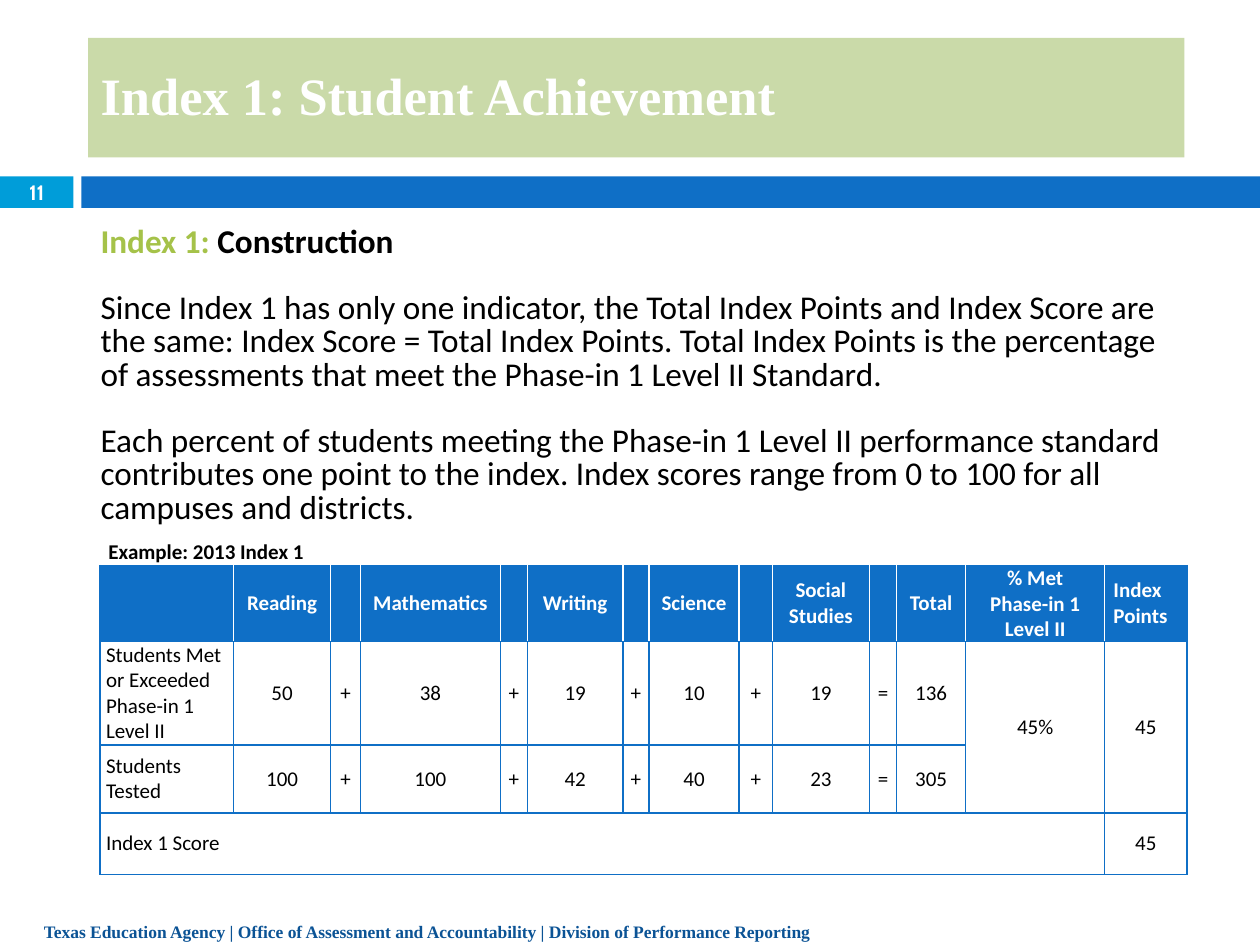
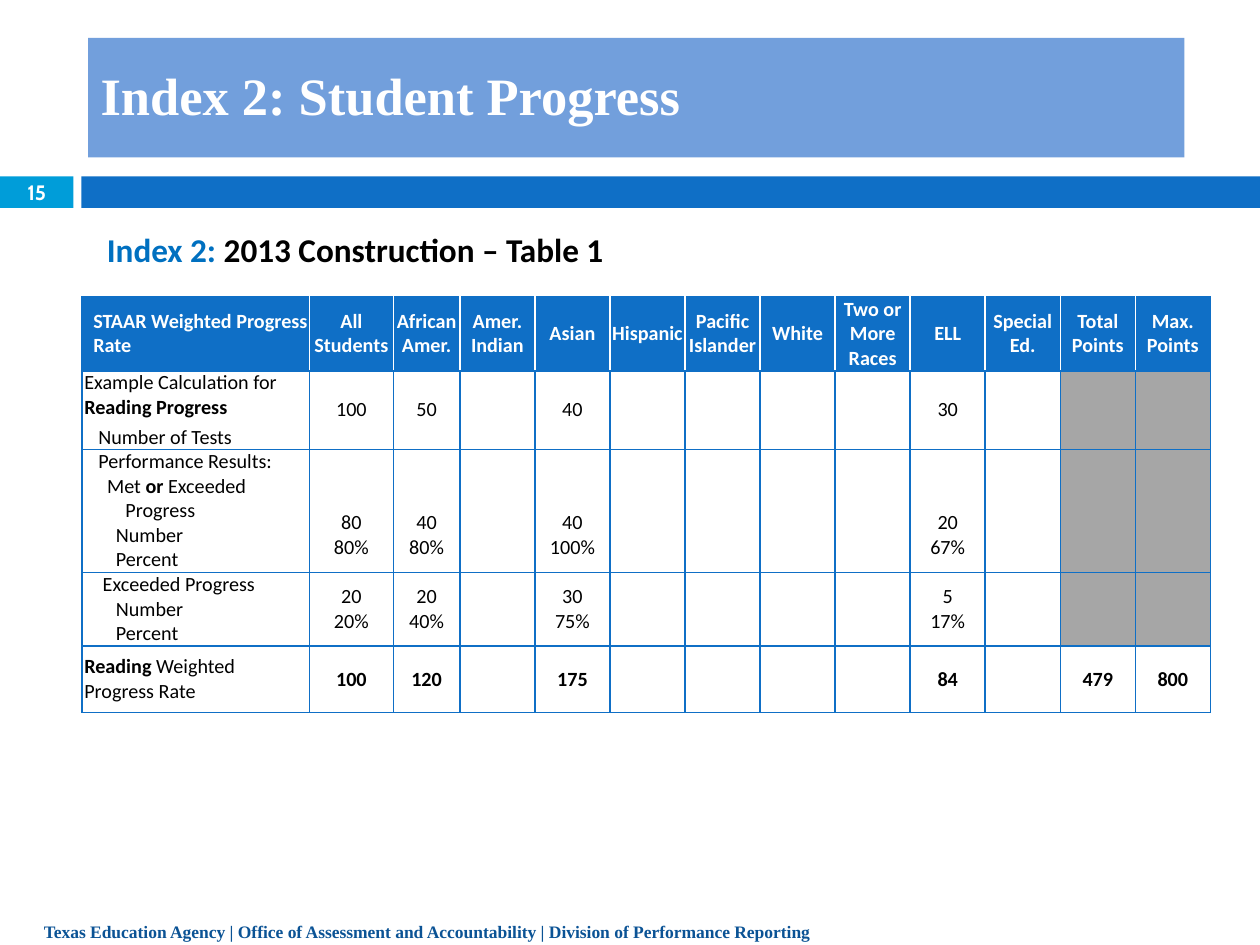
from lxml.etree import SubElement
from pptx import Presentation
from pptx.dml.color import RGBColor
from pptx.enum.shapes import MSO_SHAPE as Preset
from pptx.enum.text import MSO_ANCHOR as Anchor, PP_ALIGN as Align
from pptx.oxml.ns import qn
from pptx.util import Pt

COLORS = {
    "white": "FFFFFF",
    "black": "000000",
    "blue": "0F6FC6",
    "cyan": "009DD9",
    "footer": "0B5395",
    "green band": "CADAA9",
    "green text": "A5C249",
    "blue band": "729FDC",
    "blue text": "0070C0",
    "gray": "A6A6A6",
}
SERIF, SANS, NUMBER_FONT = "Times New Roman", "Calibri", "Cabin"
FOOTER = ("Texas Education Agency | Office of Assessment and Accountability"
          " | Division of Performance Reporting")


def rgb(name):
    return RGBColor.from_string(COLORS[name])


def set_font(font, name, size, color, bold=False):
    font.name, font.size, font.bold = name, Pt(size), bold
    font.color.rgb = rgb(color)


def add_band(slide, left, top, width, height, color):
    band = slide.shapes.add_shape(
        Preset.RECTANGLE, Pt(left), Pt(top), Pt(width), Pt(height))
    band.shadow.inherit = False
    band.fill.solid()
    band.fill.fore_color.rgb = rgb(color)
    band.line.fill.background()
    band.text_frame.vertical_anchor = Anchor.MIDDLE
    return band


def add_text_box(slide, left, top, width, height):
    frame = slide.shapes.add_textbox(
        Pt(left), Pt(top), Pt(width), Pt(height)).text_frame
    frame.word_wrap = True
    return frame


def write_line(paragraph, text, font, size, color, bold=True, spacing=None):
    paragraph.text = text
    paragraph.alignment = Align.LEFT
    set_font(paragraph.font, font, size, color, bold)
    if spacing:
        paragraph.line_spacing = Pt(spacing)


def write_heading(paragraph, index, topic, color, spacing):
    paragraph.line_spacing = Pt(spacing)
    for text, run_color in ((index, color), (topic, "black")):
        run = paragraph.add_run()
        run.text = text
        set_font(run.font, SANS, 19, run_color, True)


def add_base_slide(presentation, title, number, title_color):
    """Add a slide with its title band, number bar and footer."""
    slide = presentation.slides.add_slide(presentation.slide_layouts[6])
    number_band = add_band(slide, 0, 100.8, 42, 18, "cyan")
    add_band(slide, 46.5, 100.8, 673.5, 18, "blue")
    frame = number_band.text_frame
    frame.margin_top = frame.margin_bottom = 0
    write_line(frame.paragraphs[0], number, NUMBER_FONT, 11.9, "white")
    frame.paragraphs[0].alignment = Align.CENTER

    title_band = add_band(slide, 50.4, 21.6, 626.4, 68.4, title_color)
    write_line(title_band.text_frame.paragraphs[0], title,
               SERIF, 30, "white", spacing=32)
    footer = add_text_box(slide, 18, 509, 648, 29.5)
    write_line(footer.paragraphs[0], FOOTER, SERIF, 10, "footer", spacing=26)
    return slide


def add_grid(slide, left, top, widths, heights):
    table = slide.shapes.add_table(
        len(heights), len(widths), Pt(left), Pt(top),
        Pt(sum(widths)), Pt(sum(heights))).table
    table.horz_banding = False
    for column, width in zip(table.columns, widths):
        column.width = Pt(width)
    for row, height in zip(table.rows, heights):
        row.height = Pt(height)
    return table


def set_borders(cell, colors):
    """Draw 1 pt borders; colors maps L, R, T, B to a colour name."""
    properties = cell._tc.get_or_add_tcPr()
    for side in "LRTB":
        line = SubElement(properties, qn(f"a:ln{side}"), w="12700")
        if side in colors:
            fill = SubElement(line, qn("a:solidFill"))
            SubElement(fill, qn("a:srgbClr"), val=COLORS[colors[side]])
        else:
            SubElement(line, qn("a:noFill"))


def style_cell(cell, borders, fill=None, margin=0, anchor=Anchor.MIDDLE):
    set_borders(cell, borders)
    if fill:
        cell.fill.solid()
        cell.fill.fore_color.rgb = rgb(fill)
    else:
        cell.fill.background()
    cell.margin_left = cell.margin_right = Pt(margin)
    cell.margin_top = cell.margin_bottom = 0
    cell.vertical_anchor = anchor


def write_cell(cell, text, size, color="black", bold=False, align=Align.CENTER):
    cell.text = text
    for paragraph in cell.text_frame.paragraphs:
        paragraph.alignment = align
        set_font(paragraph.font, SANS, size, color, bold)


def write_label(cell, lines, size):
    """Write (indent, text) lines, where asterisks enclose bold words."""
    frame = cell.text_frame
    for position, (indent, text) in enumerate(lines):
        paragraph = frame.add_paragraph() if position else frame.paragraphs[0]
        set_font(paragraph.font, SANS, size, "black")
        paragraph._p.get_or_add_pPr().set("marL", str(Pt(indent)))
        for part, words in enumerate(text.split("*")):
            if words:
                run = paragraph.add_run()
                run.text = words
                run.font.bold = part % 2 == 1


BLUE_BORDERS = dict.fromkeys("LRTB", "blue")


def fill_header(table, row, names, size):
    last = len(names) - 1
    for column, name in enumerate(names):
        cell = table.cell(row, column)
        borders = dict(BLUE_BORDERS)
        if column > 0:
            borders["L"] = "white"
        if column < last:
            borders["R"] = "white"
        style_cell(cell, borders, "blue")
        write_cell(cell, name, size, "white", True)


def add_achievement_table(slide):
    widths = [76.5, 55.5, 17, 80, 15.5, 54.5, 15, 51.5, 19, 55.5, 15.5,
              39.5, 79.5, 47]
    table = add_grid(slide, 57, 304.5, widths, [18.7, 43.5, 59, 39, 35])
    last = len(widths) - 1
    for column in range(len(widths)):
        style_cell(table.cell(0, column), {"B": "blue"}, margin=5,
                   anchor=Anchor.BOTTOM)
    caption = table.cell(0, 0)
    caption.merge(table.cell(0, last))
    write_cell(caption, "Example: 2013 Index 1", 12, bold=True, align=Align.LEFT)
    caption.text_frame.paragraphs[0].line_spacing = Pt(13)

    fill_header(table, 1, [
        "", "Reading", "", "Mathematics", "", "Writing", "", "Science", "",
        "Social\nStudies", "", "Total", "% Met\nPhase-in 1\nLevel II",
        "Index Points"], 12)
    points_header = table.cell(1, last)
    points_header.margin_left = Pt(5)
    points_header.text_frame.paragraphs[0].alignment = Align.LEFT

    signs = ["+", "+", "+", "+", "="]
    records = [
        ("Students Met or Exceeded Phase-in 1 Level II",
         [50, 38, 19, 10, 19], 136, ["45%", "45"]),
        ("Students Tested", [100, 100, 42, 40, 23], 305, ["", ""]),
    ]
    rows = []
    for label, counts, total, results in records:
        terms = [str(term) for pair in zip(counts, signs) for term in pair]
        rows.append([label, *terms, str(total), *results])
    rows.append(["Index 1 Score", *[""] * (last - 1), "45"])
    for row, values in enumerate(rows, 2):
        for column, value in enumerate(values):
            cell = table.cell(row, column)
            is_label = column == 0
            style_cell(cell, BLUE_BORDERS, margin=3.6 if is_label else 0)
            write_cell(cell, value, 12,
                       align=Align.LEFT if is_label else Align.CENTER)
    for column in (last - 1, last):
        table.cell(2, column).merge(table.cell(3, column))
    table.cell(4, 0).merge(table.cell(4, last - 1))


def add_progress_table(slide):
    size = 11.5
    names = ["STAAR Weighted Progress Rate", "All\nStudents", "African Amer.",
             "Amer. Indian", "Asian", "Hispanic", "Pacific Islander", "White",
             "Two or More\nRaces", "ELL", "Special Ed.", "Total Points",
             "Max.\nPoints"]
    widths = [130, 48, 38] + [42.9] * 10
    table = add_grid(slide, 46.8, 169.7, widths, [42.2, 45, 70.2, 42.2, 38])
    fill_header(table, 0, names, size)
    corner = table.cell(0, 0)
    corner.margin_left = Pt(6.5)
    corner.text_frame.paragraphs[0].alignment = Align.LEFT

    labels = [
        [(0, "Example Calculation for *Reading Progress*"),
         (8, "Number of Tests")],
        [(8, "Performance Results:"), (13, "Met *or* Exceeded"),
         (23.5, "Progress"), (18, "Number"), (18, "Percent")],
        [(10.5, "Exceeded Progress"), (18, "Number"), (18, "Percent")],
        [(0, "*Reading* Weighted Progress Rate")],
    ]
    groups = {"all": 1, "african": 2, "asian": 4, "ell": 9,
              "total": 11, "maximum": 12}
    results = [
        {"all": "100", "african": "50", "asian": "40", "ell": "30"},
        {"all": "80\n80%", "african": "40\n80%", "asian": "40\n100%",
         "ell": "20\n67%"},
        {"all": "20\n20%", "african": "20\n40%", "asian": "30\n75%",
         "ell": "5\n17%"},
        {"all": "100", "african": "120", "asian": "175", "ell": "84",
         "total": "479", "maximum": "800"},
    ]
    rate_row = len(results)
    for row, (label, record) in enumerate(zip(labels, results), 1):
        values = {groups[group]: text for group, text in record.items()}
        label_cell = table.cell(row, 0)
        style_cell(label_cell, BLUE_BORDERS, margin=1.4)
        write_label(label_cell, label, size)
        for column in range(1, len(names)):
            cell = table.cell(row, column)
            unused = column >= groups["total"] and row < rate_row
            style_cell(cell, BLUE_BORDERS, "gray" if unused else None)
            write_cell(cell, values.get(column, ""), size, bold=row == rate_row)
            if row == 2 and column in values:
                cell.margin_top = Pt(28)
    table.cell(1, 0).text_frame.paragraphs[1].space_before = Pt(3)


def add_achievement_slide(presentation):
    slide = add_base_slide(
        presentation, "Index 1: Student Achievement", "11", "green band")
    add_achievement_table(slide)
    body = add_text_box(slide, 50.4, 126, 626.4, 175)
    write_heading(body.paragraphs[0], "Index 1: ", "Construction",
                  "green text", 19)
    for text in (
        "Since Index 1 has only one indicator, the Total Index Points and Index "
        "Score are the same: Index Score = Total Index Points. Total Index "
        "Points is the percentage of assessments that meet the Phase-in 1 "
        "Level II Standard.",
        "Each percent of students meeting the Phase-in 1 Level II performance "
        "standard contributes one point to the index. Index scores range from "
        "0 to 100 for all campuses and districts.",
    ):
        paragraph = body.add_paragraph()
        write_line(paragraph, text, SANS, 19, "black", bold=False, spacing=19)
        paragraph.space_before = Pt(19)


def add_progress_slide(presentation):
    slide = add_base_slide(
        presentation, "Index 2: Student Progress", "15", "blue band")
    add_progress_table(slide)
    heading = add_text_box(slide, 54, 126, 645, 29)
    write_heading(heading.paragraphs[0], "Index 2: ",
                  "2013 Construction – Table 1", "blue text", 24)


def main():
    presentation = Presentation()
    presentation.slide_width, presentation.slide_height = Pt(720), Pt(540)
    add_achievement_slide(presentation)
    add_progress_slide(presentation)
    presentation.save("out.pptx")


if __name__ == "__main__":
    main()
